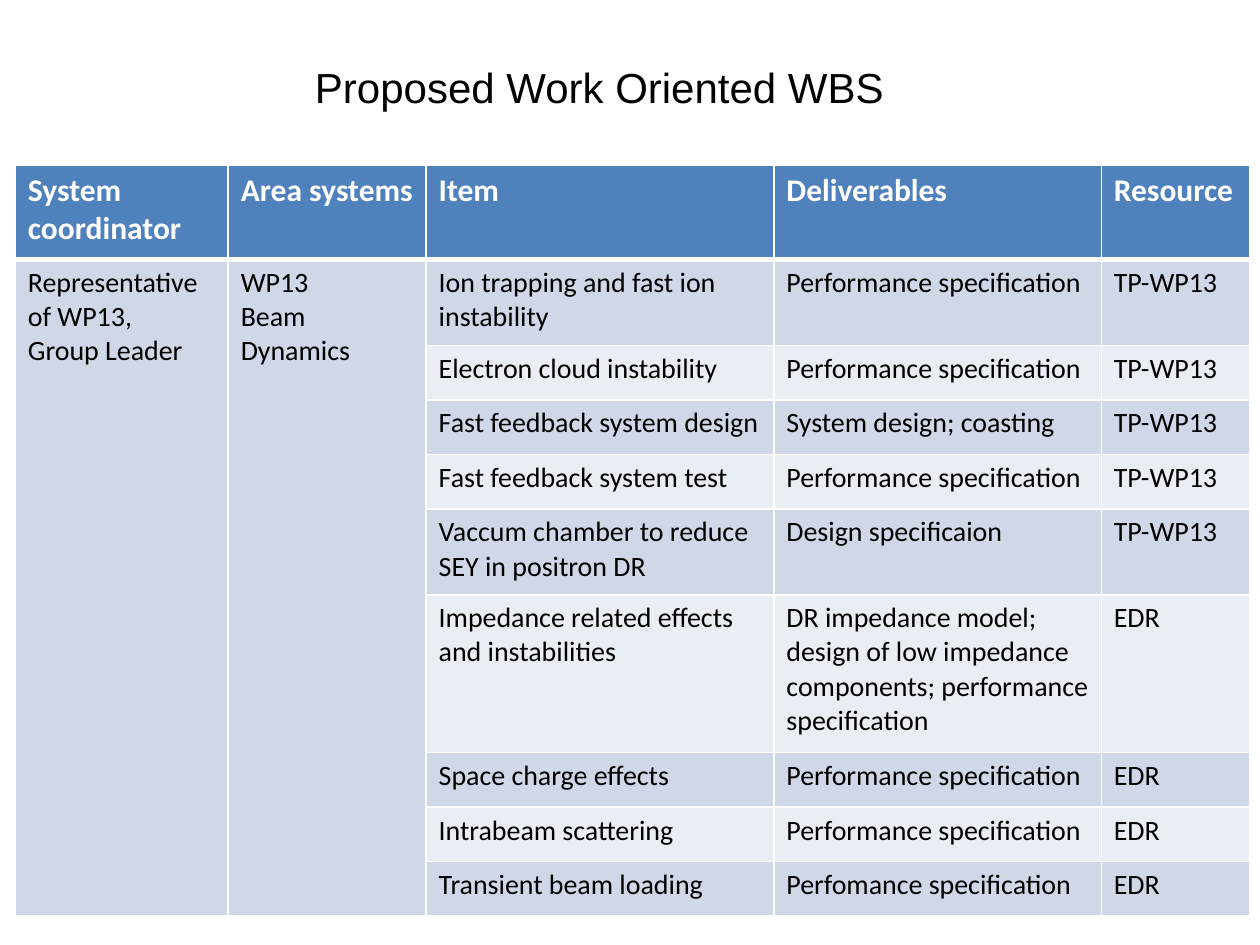
from lxml.etree import SubElement
from pptx import Presentation
from pptx.dml.color import RGBColor
from pptx.enum.text import MSO_AUTO_SIZE
from pptx.oxml.ns import qn
from pptx.util import Cm, Pt

COLOURS = {
    "text": "000000",
    "white": "FFFFFF",
    "header": "4F81BD",
    "band_dark": "D0D8E8",
    "band_light": "E9EDF4",
}
COLUMN_WIDTHS = [4.29, 3.99, 7.01, 6.6, 3]
LINE_ROW_HEIGHT = 1.1
ROW_HEIGHTS = [1.9, 1.73, *[LINE_ROW_HEIGHT] * 3, 1.73, 3.18, *[LINE_ROW_HEIGHT] * 3]
HEADINGS = ["System coordinator", "Area systems", "Item", "Deliverables", "Resource"]
COORDINATOR = "Representative of WP13,\nGroup Leader"
AREA = "WP13\nBeam Dynamics"
PERFORMANCE = "Performance specification"
WORK_ITEMS = [
    ("Ion trapping and fast ion instability", PERFORMANCE, "TP-WP13"),
    ("Electron cloud instability", PERFORMANCE, "TP-WP13"),
    ("Fast feedback system design", "System design; coasting", "TP-WP13"),
    ("Fast feedback system test", PERFORMANCE, "TP-WP13"),
    ("Vaccum chamber to reduce SEY in positron DR", "Design specificaion", "TP-WP13"),
    (
        "Impedance related effects and instabilities",
        "DR impedance model; design of low impedance components; performance specification",
        "EDR",
    ),
    ("Space charge effects", PERFORMANCE, "EDR"),
    ("Intrabeam scattering", PERFORMANCE, "EDR"),
    ("Transient beam loading", "Perfomance specification", "EDR"),
]


def format_text(text_frame, font, size, colour, bold=False):
    """Format every run in a text frame."""
    for para in text_frame.paragraphs:
        for span in para.runs:
            span.font.name = font
            span.font.size = Pt(size)
            span.font.bold = bold
            span.font.color.rgb = RGBColor.from_string(COLOURS[colour])


def add_title(page, text):
    """Add the page title as a text box."""
    box = page.shapes.add_textbox(Cm(6.1), Cm(1.12), Cm(12.4), Cm(1.28))
    frame = box.text_frame
    frame.word_wrap = True
    frame.auto_size = MSO_AUTO_SIZE.SHAPE_TO_FIT_TEXT
    frame.text = text
    format_text(frame, "Arial", 24, "text")


def set_borders(cell, widths):
    """Draw white borders with the given widths in points by side."""
    properties = cell._tc.get_or_add_tcPr()
    for side, width in widths.items():
        line = SubElement(properties, qn(f"a:ln{side}"), w=str(Pt(width)))
        fill = SubElement(line, qn("a:solidFill"))
        SubElement(fill, qn("a:srgbClr"), val=COLOURS["white"])


def fill_cell(cell, text, row):
    """Write and style one table cell according to its row."""
    header = row == 0
    cell.text_frame.text = text
    if header:
        format_text(cell.text_frame, "Calibri", 18, "white", bold=True)
    else:
        format_text(cell.text_frame, "Calibri", 16, "text")
    top = 3 if row == 1 else 1
    bottom = 3 if header else 1
    set_borders(cell, {"L": 1, "R": 1, "T": top, "B": bottom})
    band = "header" if header else "band_dark" if row % 2 else "band_light"
    cell.fill.solid()
    cell.fill.fore_color.rgb = RGBColor.from_string(COLOURS[band])


def add_work_table(page):
    """Add the work breakdown table with its two merged columns."""
    rows = [HEADINGS]
    for index, item in enumerate(WORK_ITEMS):
        leading = ("", "") if index else (COORDINATOR, AREA)
        rows.append([*leading, *item])
    table = page.shapes.add_table(
        len(rows), len(HEADINGS), Cm(0.31), Cm(3.33),
        Cm(sum(COLUMN_WIDTHS)), Cm(sum(ROW_HEIGHTS)),
    ).table
    for column, width in zip(table.columns, COLUMN_WIDTHS):
        column.width = Cm(width)
    for row, height in zip(table.rows, ROW_HEIGHTS):
        row.height = Cm(height)
    for row_index, texts in enumerate(rows):
        for column_index, text in enumerate(texts):
            fill_cell(table.cell(row_index, column_index), text, row_index)
    for column_index in range(2):
        table.cell(1, column_index).merge(table.cell(len(rows) - 1, column_index))


def main():
    """Build and save the slide."""
    deck = Presentation()
    deck.slide_width = Cm(25.4)
    deck.slide_height = Cm(19.05)
    page = deck.slides.add_slide(deck.slide_layouts[6])
    add_title(page, "Proposed Work Oriented WBS")
    add_work_table(page)
    deck.save("out.pptx")


if __name__ == "__main__":
    main()
